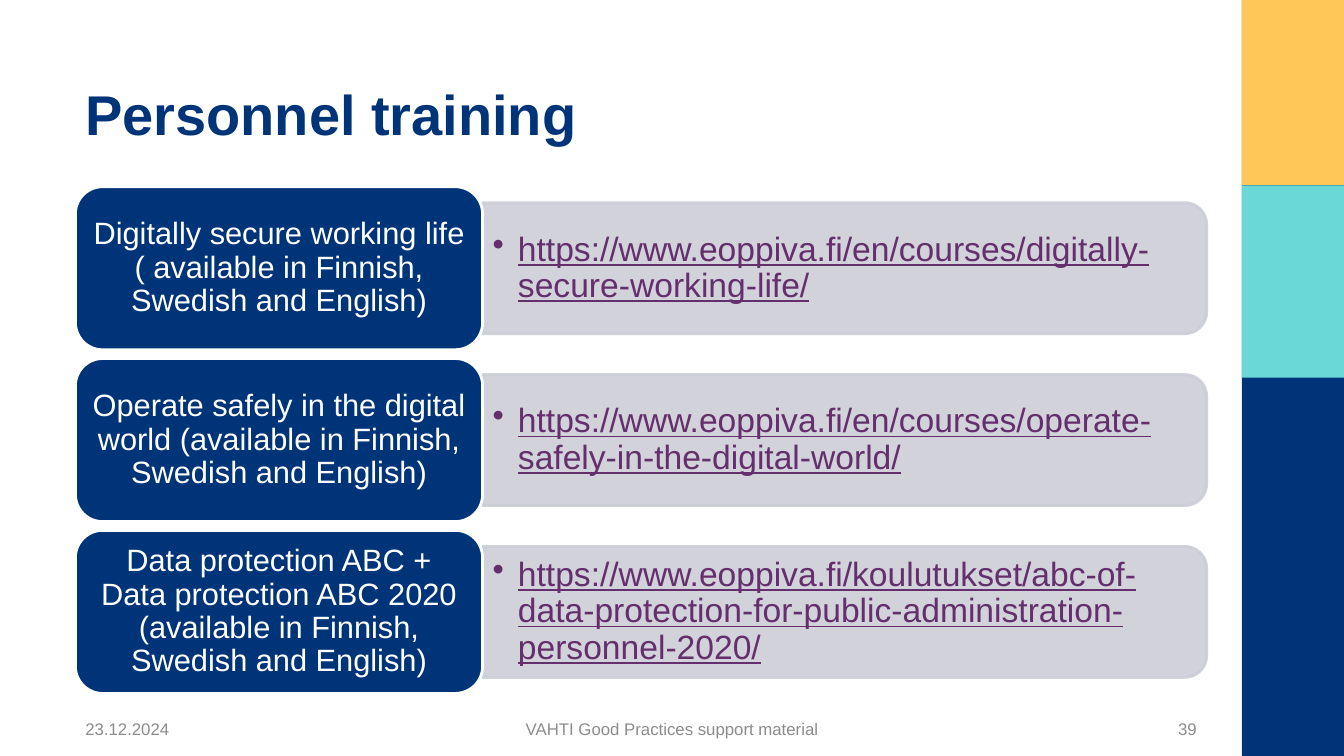
from typing import NamedTuple

import lxml.etree
import pptx
import pptx.dml.color
import pptx.enum.shapes
import pptx.enum.text
import pptx.oxml.ns
import pptx.util

Cm = pptx.util.Cm
Pt = pptx.util.Pt
Kind = pptx.enum.shapes.MSO_SHAPE
Side = pptx.enum.text.PP_ALIGN
Anchor = pptx.enum.text.MSO_ANCHOR

NAVY, WHITE, SILVER, PLUM, GREY = "003479", "FFFFFF", "CCCED7", "642F6C", "8C8C8C"


class Box(NamedTuple):
    left: float
    top: float
    width: float
    height: float


class Band(NamedTuple):
    box: Box
    fill: str


class Label(NamedTuple):
    box: Box
    text: str
    style: str


class Course(NamedTuple):
    name: str
    link: str


# Font values, then alignment and anchor
STYLES = {
    "title": ({"size": Pt(40), "bold": True}, NAVY, Side.LEFT, Anchor.BOTTOM),
    "date": ({"size": Pt(12)}, GREY, Side.LEFT, Anchor.MIDDLE),
    "footer": ({"size": Pt(12)}, GREY, Side.CENTER, Anchor.MIDDLE),
    "number": ({"size": Pt(12)}, GREY, Side.RIGHT, Anchor.MIDDLE),
    "name": ({"size": Pt(22)}, WHITE, Side.CENTER, Anchor.MIDDLE),
    "link": ({"size": Pt(24), "underline": True}, PLUM, Side.LEFT, Anchor.MIDDLE),
}

BANDS = [
    Band(Box(31.29, 0, 2.57, 19.05), NAVY),
    Band(Box(31.29, 0, 2.57, 4.67), "FFC658"),
    Band(Box(31.29, 4.67, 2.57, 4.85), "69D8D7"),
]

LABELS = [
    Label(Box(1.9, 0.41, 28.5, 3.4), "Personnel training", "title"),
    Label(Box(1.9, 18.06, 4.2, 0.6), "23.12.2024", "date"),
    Label(Box(8.86, 18.06, 16.15, 0.6), "VAHTI Good Practices support material", "footer"),
    Label(Box(28.1, 18.06, 2.3, 0.6), "39", "number"),
]

COURSES = [
    Course("Digitally secure working life ( available in Finnish, Swedish and English)",
           "https://www.eoppiva.fi/en/courses/digitally-secure-working-life/"),
    Course("Operate safely in the digital world (available in Finnish, Swedish and English)",
           "https://www.eoppiva.fi/en/courses/operate-safely-in-the-digital-world/"),
    Course("Data protection ABC + Data protection ABC 2020 "
           "(available in Finnish, Swedish and English)",
           "https://www.eoppiva.fi/koulutukset/"
           "abc-of-data-protection-for-public-administration-personnel-2020/"),
]

FIRST, PITCH = 6.76, 4.33  # centre of the first row, step to the next
CARD_LEFT, CARD_WIDTH, CARD_HEIGHT = 1.9, 10.26, 4.11
BAR_LEFT, BAR_WIDTH, BAR_HEIGHT = 12.16, 18.24, 3.3
LINK_WIDTH, LINK_HEIGHT = 18.08, 2.98


def rgb(code: str) -> pptx.dml.color.RGBColor:
    return pptx.dml.color.RGBColor.from_string(code)


def place(box: Box) -> list[pptx.util.Cm]:
    return [Cm(size) for size in box]


def shape(slide, kind, box: Box, fill: str, line: str = ""):
    form = slide.shapes.add_shape(kind, *place(box))
    form.shadow.inherit = False
    form.fill.solid()
    form.fill.fore_color.rgb = rgb(fill)
    if line:
        form.line.color.rgb = rgb(line)
        form.line.width = Pt(2)
    else:
        form.line.fill.background()
    return form


def fade(form, share: int) -> None:
    """Set the opacity of fill and line, in percent."""
    for tint in form._element.spPr.iter(pptx.oxml.ns.qn("a:srgbClr")):
        alpha = lxml.etree.SubElement(tint, pptx.oxml.ns.qn("a:alpha"))
        alpha.set("val", str(share * 1000))


def bullet(para) -> None:
    props = para._p.get_or_add_pPr()
    props.set("marL", str(Cm(0.64)))
    props.set("indent", str(-Cm(0.64)))
    lxml.etree.SubElement(props, pptx.oxml.ns.qn("a:buChar")).set("char", "•")


def write(form, text: str, style: str):
    """Put one styled paragraph in the form and return it."""
    font, tint, side, anchor = STYLES[style]
    frame = form.text_frame
    frame.word_wrap = True
    frame.vertical_anchor = anchor
    para = frame.paragraphs[0]
    para.alignment = side
    run = para.add_run()
    run.text = text
    for key, value in {"name": "Arial", **font}.items():
        setattr(run.font, key, value)
    run.font.color.rgb = rgb(tint)
    return para


def label(slide, item: Label):
    return write(slide.shapes.add_textbox(*place(item.box)), item.text, item.style)


def row(slide, course: Course, mid: float) -> None:
    # The bar stands upright and is turned a quarter, rounded end to the right
    bar = shape(slide, Kind.ROUND_2_SAME_RECTANGLE,
                Box(BAR_LEFT + (BAR_WIDTH - BAR_HEIGHT) / 2, mid - BAR_WIDTH / 2,
                    BAR_HEIGHT, BAR_WIDTH), SILVER, SILVER)
    bar.rotation = 90
    fade(bar, 90)

    box = Box(BAR_LEFT, mid - LINK_HEIGHT / 2, LINK_WIDTH, LINK_HEIGHT)
    link = label(slide, Label(box, course.link, "link"))
    bullet(link)
    link.line_spacing = 0.9

    card = shape(slide, Kind.ROUNDED_RECTANGLE,
                 Box(CARD_LEFT, mid - CARD_HEIGHT / 2, CARD_WIDTH, CARD_HEIGHT), NAVY, WHITE)
    card.text_frame.margin_left = card.text_frame.margin_right = Cm(0.23)
    write(card, course.name, "name").line_spacing = 0.9


def main() -> None:
    deck = pptx.Presentation()
    deck.slide_width, deck.slide_height = Cm(33.86), Cm(19.05)
    slide = deck.slides.add_slide(deck.slide_layouts[6])
    for band in BANDS:
        shape(slide, Kind.RECTANGLE, band.box, band.fill)
    for rank, course in enumerate(COURSES):
        row(slide, course, FIRST + rank * PITCH)
    for item in LABELS:
        label(slide, item)
    deck.save("out.pptx")


if __name__ == "__main__":
    main()
